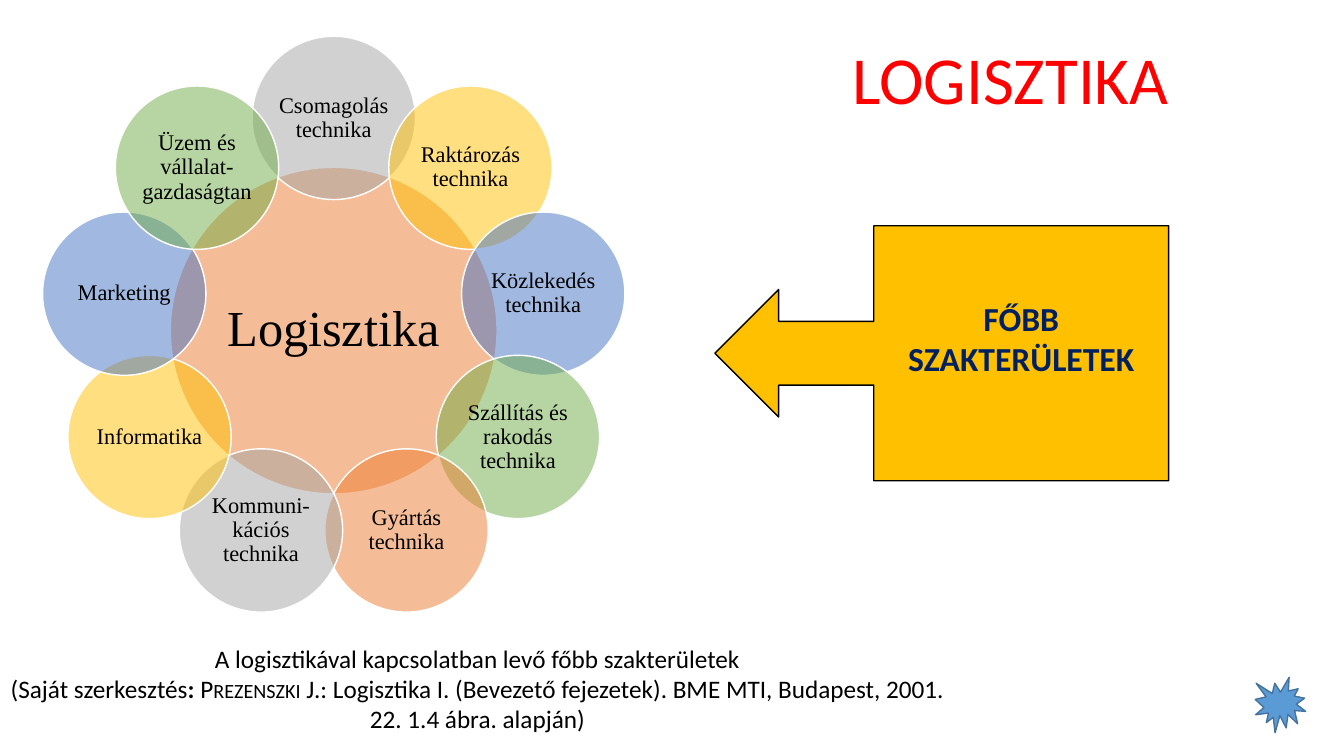
"""Builds the slide on the main fields of logistics."""
from dataclasses import dataclass
from itertools import cycle
from math import cos, radians, sin

from lxml import etree
from pptx import Presentation
from pptx.dml.color import RGBColor
from pptx.enum.shapes import MSO_SHAPE
from pptx.enum.text import MSO_ANCHOR, MSO_AUTO_SIZE, PP_ALIGN
from pptx.oxml.ns import qn
from pptx.util import Inches, Pt

CIRCLE = MSO_SHAPE.OVAL
CALLOUT = MSO_SHAPE.LEFT_ARROW_CALLOUT
BURST = MSO_SHAPE.EXPLOSION1
CENTER = PP_ALIGN.CENTER
TOP, MIDDLE = MSO_ANCHOR.TOP, MSO_ANCHOR.MIDDLE
NO_FIT = MSO_AUTO_SIZE.NONE
WIDTH, HEIGHT = Inches(13.33), Inches(7.5)
TITLE_ONLY = 5


@dataclass(frozen=True)
class Theme:
    """Colours, fonts and type sizes of the slide."""
    black: str = "000000"
    white: str = "FFFFFF"
    red: str = "FF0000"
    navy: str = "002060"
    orange: str = "ED7D31"
    gold: str = "FFC000"
    burst: str = "5B9BD5"
    burst_edge: str = "43739E"
    petals: tuple = ("A5A5A5", "FFC000", "4472C4", "70AD47", "ED7D31")
    sans: str = "Calibri"
    serif: str = "Times New Roman"
    title: int = 48
    hub: int = 36
    callout: int = 24
    caption: int = 18
    petal: int = 16


THEME = Theme()
FIELDS = (
    "Csomagolás technika", "Raktározás technika", "Közlekedés technika",
    "Szállítás és rakodás technika", "Gyártás technika",
    "Kommuni-kációs technika", "Informatika", "Marketing",
    "Üzem és vállalat-gazdaságtan",
)


def across(percent):
    """Return a share of the slide width."""
    return round(WIDTH * percent / 100)


def down(percent):
    """Return a share of the slide height."""
    return round(HEIGHT * percent / 100)


def area(left, top, width, height):
    """Turn percentages of the slide into a box."""
    return across(left), down(top), across(width), down(height)


def add_run(paragraph, text, size, color, font=THEME.sans, bold=False):
    """Append one formatted run."""
    run = paragraph.add_run()
    run.text = text
    run.font.size = Pt(size)
    run.font.name = font
    run.font.bold = bold
    run.font.color.rgb = RGBColor.from_string(color)
    return run


def prepare_frame(shape, anchor, inset=None):
    """Set wrapping, anchor and insets, and return the centred first paragraph."""
    frame = shape.text_frame
    frame.word_wrap = True
    frame.auto_size = NO_FIT
    frame.vertical_anchor = anchor
    if inset is not None:
        frame.margin_left = frame.margin_right = inset
        frame.margin_top = frame.margin_bottom = inset
    paragraph = frame.paragraphs[0]
    paragraph.alignment = CENTER
    return paragraph


def add_figure(shapes, kind, box, fill, edge):
    """Add a preset shape with a flat fill and a thin edge."""
    figure = shapes.add_shape(kind, *box)
    figure.shadow.inherit = False
    figure.fill.solid()
    figure.fill.fore_color.rgb = RGBColor.from_string(fill)
    figure.line.color.rgb = RGBColor.from_string(edge)
    figure.line.width = Pt(1)
    return figure


def add_disc(shapes, center, diameter, color, label, size, inset):
    """Add a half-transparent labelled circle around a centre."""
    left, top = (round(middle - diameter / 2) for middle in center)
    disc = add_figure(shapes, CIRCLE, (left, top, diameter, diameter),
                      color, THEME.white)
    tint = disc.fill._xPr.find(qn("a:solidFill"))[0]
    etree.SubElement(tint, qn("a:alpha"), val="50000")
    paragraph = prepare_frame(disc, MIDDLE, inset)
    paragraph.line_spacing = 0.9
    add_run(paragraph, label, size, THEME.black, THEME.serif)


def add_flower(slide):
    """Add the hub and its ring of evenly turned petals."""
    shapes = slide.shapes.add_group_shape().shapes
    hub_x, hub_y, reach = across(24.83), down(43.73), down(28.13)
    add_disc(shapes, (hub_x, hub_y), down(43.2), THEME.orange,
             "Logisztika", THEME.hub, down(0.67))
    for index, (field, color) in enumerate(zip(FIELDS, cycle(THEME.petals))):
        turn = radians(360 * index / len(FIELDS))
        center = hub_x + reach * sin(turn), hub_y - reach * cos(turn)
        add_disc(shapes, center, down(21.6), color, field,
                 THEME.petal, down(0.27))


def add_text_shadow(run):
    """Give a run a soft shadow."""
    effects = etree.Element(qn("a:effectLst"))
    shadow = etree.SubElement(effects, qn("a:outerShdw"), blurRad="38100",
                              dist="38100", dir="2700000", algn="tl")
    tint = etree.SubElement(shadow, qn("a:srgbClr"), val=THEME.black)
    etree.SubElement(tint, qn("a:alpha"), val="43000")
    run.font._element.find(qn("a:solidFill")).addnext(effects)


def add_callout(slide):
    """Add the arrow box that points at the flower."""
    callout = add_figure(slide.shapes, CALLOUT,
                         area(53.19, 29.87, 33.76, 33.73),
                         THEME.gold, THEME.black)
    paragraph = prepare_frame(callout, MIDDLE)
    callout.text_frame.margin_bottom = down(4.67)
    add_text_shadow(add_run(paragraph, "FŐBB SZAKTERÜLETEK", THEME.callout,
                            THEME.navy, bold=True))


def place_title(slide):
    """Move the title placeholder and fill it."""
    title = slide.shapes.title
    title.left, title.top, title.width, title.height = area(
        53.19, 4.27, 44.04, 12.13)
    paragraph = prepare_frame(title, TOP)
    paragraph.line_spacing = 1.0
    add_run(paragraph, "LOGISZTIKA", THEME.title, THEME.red)


def add_caption(slide):
    """Add the caption with its source."""
    caption = slide.shapes.add_textbox(*area(0, 84.4, 71.04, 17.47))
    heading = prepare_frame(caption, TOP)
    add_run(heading, "A logisztikával kapcsolatban levő főbb szakterületek",
            THEME.caption, THEME.black)
    source = caption.text_frame.add_paragraph()
    source.alignment = CENTER
    add_run(source, "(Saját szerkesztés", THEME.caption, THEME.black)
    add_run(source, ": ", THEME.caption, THEME.black, bold=True)
    author = add_run(source, "Prezenszki", THEME.caption, THEME.black)
    author.font._element.set("cap", "small")
    add_run(source, " J.: Logisztika I. (Bevezető fejezetek). BME MTI, "
            "Budapest, 2001. 22. 1.4 ábra. alapján)",
            THEME.caption, THEME.black)


def main():
    """Build and save the slide."""
    deck = Presentation()
    deck.slide_width, deck.slide_height = WIDTH, HEIGHT
    slide = deck.slides.add_slide(deck.slide_layouts[TITLE_ONLY])
    add_flower(slide)
    add_callout(slide)
    place_title(slide)
    add_caption(slide)
    add_figure(slide.shapes, BURST, area(93.4, 89.6, 3.75, 7.33),
               THEME.burst, THEME.burst_edge)
    deck.save("out.pptx")


if __name__ == "__main__":
    main()
